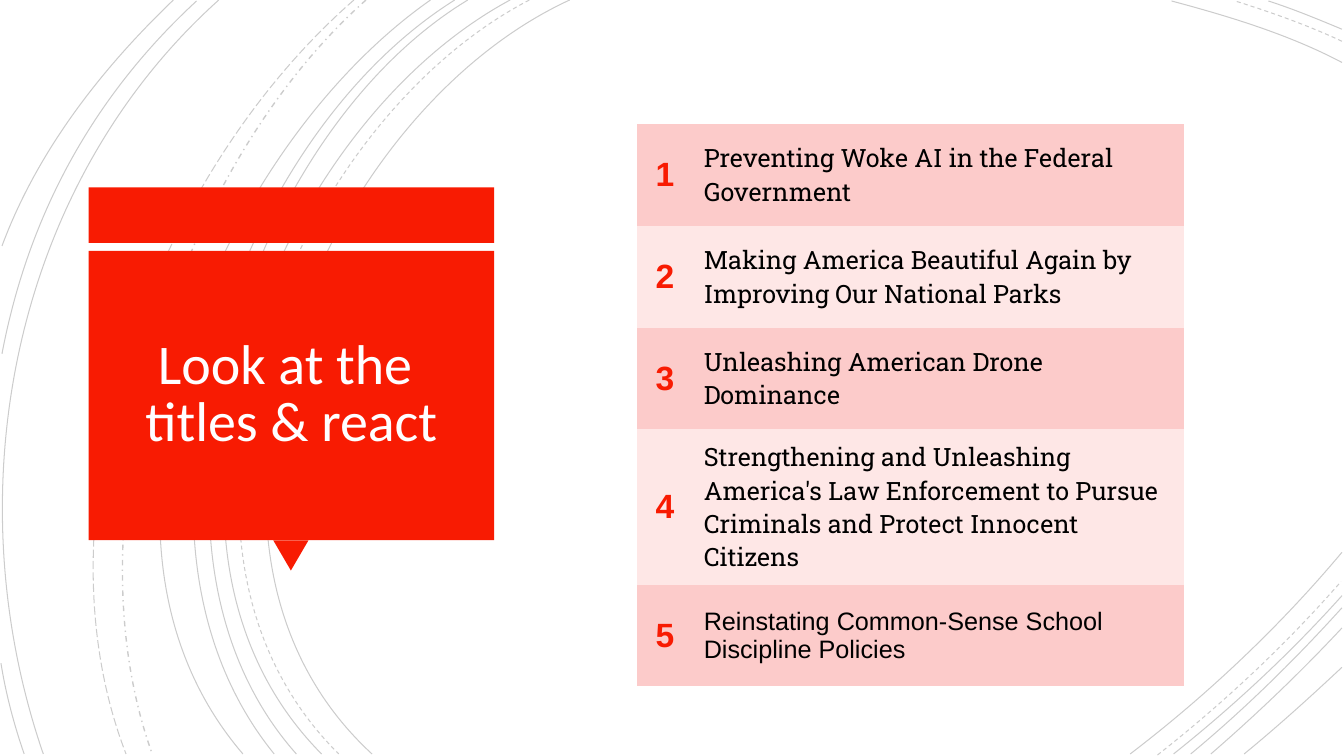
from lxml import etree
from pptx import Presentation
from pptx.dml.color import RGBColor
from pptx.enum.dml import MSO_LINE
from pptx.enum.shapes import MSO_SHAPE
from pptx.enum.text import MSO_ANCHOR, PP_ALIGN
from pptx.oxml.ns import qn
from pptx.util import Pt

PX = 9144  # EMU per px, 100 px to the inch
RECT, TRIANGLE = MSO_SHAPE.RECTANGLE, MSO_SHAPE.ISOSCELES_TRIANGLE
SOLID, DASH = MSO_LINE.SOLID, MSO_LINE.DASH
DASH_DOT, LONG_DASH = MSO_LINE.DASH_DOT, MSO_LINE.LONG_DASH
MIDDLE, CENTER, LEFT = MSO_ANCHOR.MIDDLE, PP_ALIGN.CENTER, PP_ALIGN.LEFT

COLORS = {
    "red": "F81B02",
    "title": "FFFEFF",
    "text": "000000",
    "arc": "000000",
    "band_dark": "FCCBCA",
    "band_light": "FEE7E6",
}

# Each arc: start, two control points, end; then dash style and width in points
ARCS = [
    ((565, 0), (315, 115), (143, 540), (369, 748), SOLID, 0.75),
    ((1331, 62), (1278, 34), (1218, 16), (1162, 1), SOLID, 0.75),
    ((1121, 748), (1197, 690), (1269, 622), (1331, 548), SOLID, 0.75),
    ((525, 0), (285, 125), (123, 537), (336, 748), DASH, 0.75),
    ((1331, 41), (1297, 25), (1260, 12), (1225, 1), DASH, 0.75),
    ((1148, 749), (1213, 698), (1275, 640), (1330, 577), DASH, 0.75),
    ((506, 0), (270, 127), (110, 537), (319, 748), SOLID, 0.75),
    ((1331, 29), (1307, 19), (1283, 9), (1258, 1), SOLID, 0.75),
    ((1164, 748), (1223, 701), (1280, 648), (1331, 591), SOLID, 0.75),
    ((464, 0), (244, 133), (110, 541), (294, 748), SOLID, 0.75),
    ((1181, 748), (1234, 704), (1284, 655), (1331, 603), SOLID, 0.75),
    ((451, 0), (231, 138), (97, 533), (272, 748), SOLID, 0.75),
    ((1201, 748), (1246, 709), (1290, 667), (1331, 623), SOLID, 0.75),
    ((427, 0), (217, 147), (53, 529), (241, 748), SOLID, 0.75),
    ((1234, 748), (1267, 721), (1299, 692), (1331, 662), SOLID, 0.75),
    ((363, 0), (176, 166), (65, 509), (151, 748), DASH_DOT, 1),
    ((351, 0), (157, 169), (29, 499), (125, 748), LONG_DASH, 0.75),
    ((217, 0), (11, 185), (-46, 490), (43, 748), SOLID, 0.75),
    ((195, 1), (92, 96), (28, 214), (2, 351), SOLID, 0.75),
    ((1, 658), (6, 689), (14, 719), (24, 748), SOLID, 0.75),
    ((172, 0), (100, 69), (37, 150), (2, 244), SOLID, 0.75),
]

TITLES = [
    ("Preventing Woke AI in the Federal Government", "Roboto Slab"),
    ("Making America Beautiful Again by Improving Our National Parks", "Roboto Slab"),
    ("Unleashing American Drone Dominance", "Roboto Slab"),
    ("Strengthening and Unleashing America's Law Enforcement to Pursue "
     "Criminals and Protect Innocent Citizens", "Roboto Slab"),
    ("Reinstating Common-Sense School Discipline Policies", "Arial"),
]


def rgb(name):
    return RGBColor.from_string(COLORS[name])


def set_text(tf, text, font, size, color, align, bold=False):
    p = tf.paragraphs[0]
    p.text = text
    p.alignment = align
    p.font.name, p.font.size, p.font.bold = font, Pt(size), bold
    p.font.color.rgb = rgb(color)
    return p


def set_insets(target, inset):
    target.margin_left = target.margin_right = inset * PX
    target.margin_top = target.margin_bottom = inset * PX


def bend(sp):
    """Turn the three straight segments of a freeform into one cubic curve."""
    outline = next(sp._element.iter(qn("a:path")))
    segments = outline.findall(qn("a:lnTo"))
    curve = etree.SubElement(outline, qn("a:cubicBezTo"))
    for segment in segments:
        curve.append(segment[0])
        outline.remove(segment)


def add_arcs(slide, x, y):
    shapes = slide.shapes.add_group_shape().shapes
    for *points, dash, width in ARCS:
        start, *rest = [(x + px, y + py) for px, py in points]
        builder = shapes.build_freeform(*start, scale=PX)
        builder.add_line_segments(rest, close=False)
        sp = builder.convert_to_shape()
        bend(sp)
        sp.shadow.inherit = False
        sp.fill.background()
        sp.line.width = Pt(width)
        sp.line.dash_style = dash
        sp.line.color.rgb = rgb("arc")
        color = next(sp.line._ln.iter(qn("a:srgbClr")))
        etree.SubElement(color, qn("a:alpha"), val="20000")


def add_title_panel(slide, x, y, w, h):
    """Red bar above a red callout with a pointer at its foot."""
    bar_h, gap, tip_w, tip_h, pad = 55, 8, 35, 30, 9
    body_y = y + bar_h + gap
    body_h = h - bar_h - gap - tip_h
    parts = [
        (RECT, x, y, w, bar_h, 0),
        (TRIANGLE, x + (w - tip_w) // 2, body_y + body_h, tip_w, tip_h, 180),
        (RECT, x, body_y, w, body_h, 0),
    ]
    for kind, *box, angle in parts:
        sp = slide.shapes.add_shape(kind, *(v * PX for v in box))
        sp.rotation = angle
        sp.shadow.inherit = False
        sp.fill.solid()
        sp.fill.fore_color.rgb = rgb("red")
        sp.line.fill.background()

    box = (x + pad, body_y + pad, w - 2 * pad, body_h - 2 * pad)
    tf = slide.shapes.add_textbox(*(v * PX for v in box)).text_frame
    tf.word_wrap = True
    tf.vertical_anchor = MIDDLE
    set_insets(tf, 25)
    p = set_text(tf, "Look at the \vtitles & react", "Calibri", 40, "title", CENTER)
    p.line_spacing = 0.85


def add_titles_table(slide, x, y, w, row_h, tall_h):
    """Numbered, banded list; the fourth row is taller to hold four lines."""
    number_w = 55
    heights = [row_h, row_h, row_h, tall_h, row_h]
    frame = slide.shapes.add_table(
        len(TITLES), 2, x * PX, y * PX, w * PX, sum(heights) * PX)
    table = frame.table
    table.columns[0].width = number_w * PX
    table.columns[1].width = (w - number_w) * PX
    for i, (title, font) in enumerate(TITLES):
        table.rows[i].height = heights[i] * PX
        number_cell, title_cell = table.rows[i].cells
        for cell in (number_cell, title_cell):
            cell.fill.solid()
            cell.fill.fore_color.rgb = rgb("band_light" if i % 2 else "band_dark")
            cell.vertical_anchor = MIDDLE
            set_insets(cell, 11)
        set_text(number_cell.text_frame, str(i + 1), "Arial", 24, "red", CENTER, True)
        set_text(title_cell.text_frame, title, font, 18, "text", LEFT)
    table.first_row = table.horz_banding = False
    # "No Style, No Grid", so that no borders show between the bands
    style = next(table._tbl.iter(qn("a:tableStyleId")))
    style.text = "{2D5ABB26-0587-4C30-8999-92F81FD0307C}"


def main():
    prs = Presentation()
    prs.slide_width, prs.slide_height = 1333 * PX, 750 * PX
    slide = prs.slides.add_slide(prs.slide_layouts[6])
    add_arcs(slide, 0, 0)
    add_title_panel(slide, 88, 186, 402, 380)
    add_titles_table(slide, 632, 123, 542, 101, 154)
    prs.save("out.pptx")


if __name__ == "__main__":
    main()
